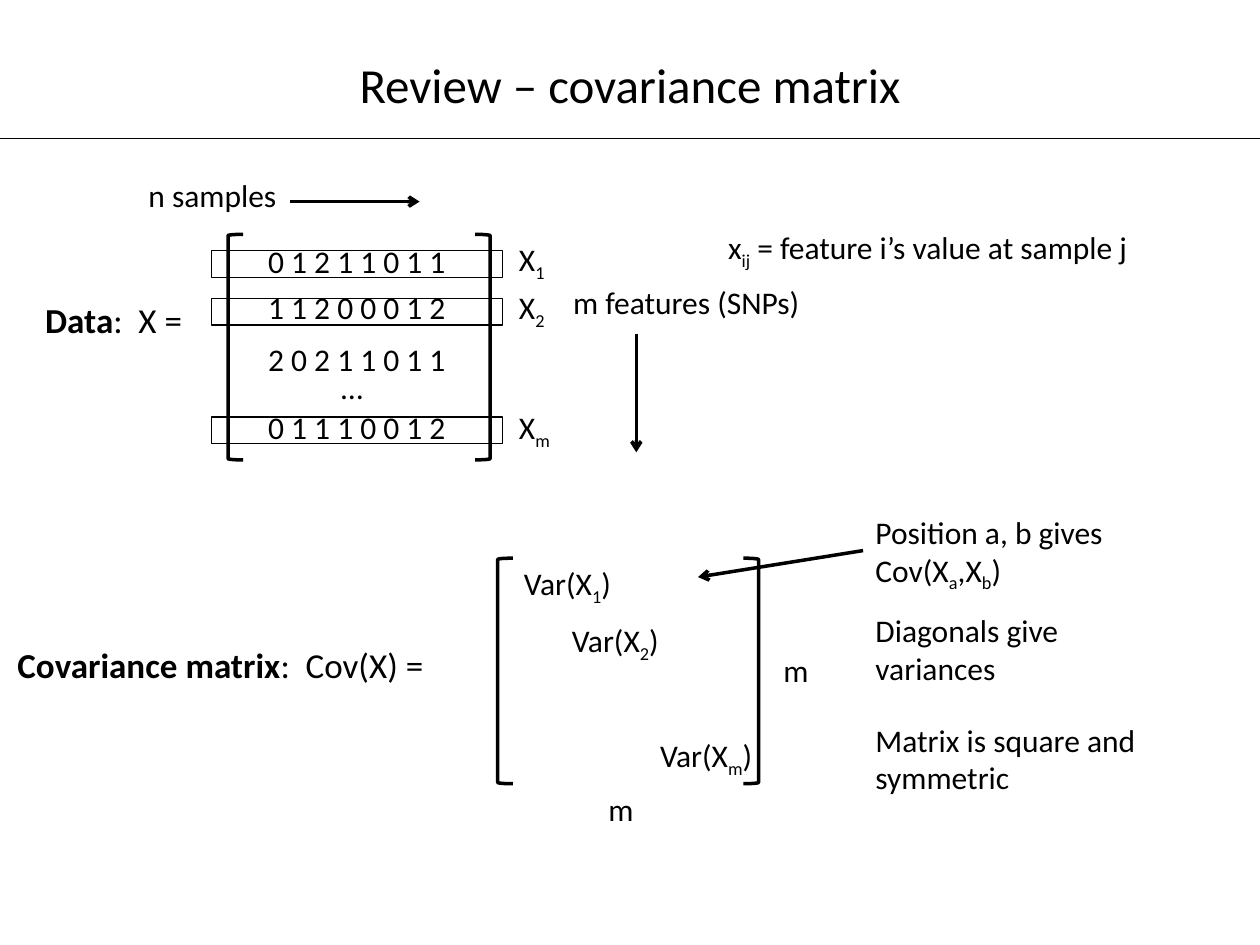
"""Build the covariance matrix review slide."""
from lxml.etree import SubElement
from pptx import Presentation
from pptx.dml.color import RGBColor
from pptx.enum.shapes import MSO_CONNECTOR as Link, MSO_SHAPE as Preset
from pptx.enum.text import MSO_AUTO_SIZE as Fit, PP_ALIGN as Align
from pptx.oxml.ns import qn
from pptx.util import Inches, Pt

COLORS = {"ink": "000000"}
INK = RGBColor.from_string(COLORS["ink"])
FONT = "Calibri"


def add_span(para, text, size, bold=False, subscript=False):
    """Add one run to a paragraph."""
    span = para.add_run()
    span.text = text
    span.font.name = FONT
    span.font.size = Pt(size)
    span.font.bold = bold
    span.font.color.rgb = INK
    if subscript:
        span.font._element.set("baseline", "-25000")


def add_box(page, left, top, width, height, wrap=False):
    """Add a text box and return its first paragraph."""
    box = page.shapes.add_textbox(Inches(left), Inches(top), Inches(width), Inches(height))
    box.text_frame.word_wrap = wrap
    box.text_frame.auto_size = Fit.SHAPE_TO_FIT_TEXT
    return box.text_frame.paragraphs[0]


def add_label(page, left, top, width, *parts):
    """Add a one-line label whose parts alternate between normal and subscript."""
    para = add_box(page, left, top, width, 0.4)
    for index, part in enumerate(parts):
        add_span(para, part, 18, subscript=index % 2 == 1)


def add_note(page, top, *parts):
    """Add a wrapped note in the right column, alternating normal and subscript."""
    para = add_box(page, 6.85, top, 2.54, 0.71, wrap=True)
    for index, part in enumerate(parts):
        add_span(para, part, 18, subscript=index % 2 == 1)


def add_heading(page, left, top, width, name, formula):
    """Add a bold name followed by its formula."""
    para = add_box(page, left, top, width, 0.44)
    add_span(para, name, 20, bold=True)
    add_span(para, formula, 20)


def add_outline(page, preset, left, top, width, height, weight):
    """Add an unfilled preset shape."""
    shape = page.shapes.add_shape(preset, Inches(left), Inches(top), Inches(width), Inches(height))
    shape.shadow.inherit = False
    shape.fill.background()
    shape.line.color.rgb = INK
    shape.line.width = Pt(weight)


def add_brackets(page, left, right, top):
    """Add the pair of brackets around a matrix."""
    for preset, x in ((Preset.LEFT_BRACKET, left), (Preset.RIGHT_BRACKET, right)):
        add_outline(page, preset, x, top, 0.12, 1.79, 2)


def add_line(page, start, end, weight=2, arrow=True):
    """Add a straight line, with an arrowhead at its end if wanted."""
    line = page.shapes.add_connector(Link.STRAIGHT, *map(Inches, start + end))
    line.line.color.rgb = INK
    line.line.width = Pt(weight)
    if arrow:
        SubElement(line.line._get_or_add_ln(), qn("a:tailEnd"), type="arrow")
    SubElement(line._element.spPr, qn("a:effectLst"))


def add_title(page):
    """Add the centred title and the rule under it."""
    para = add_box(page, 0, 0.38, 10, 0.57, wrap=True)
    para.alignment = Align.CENTER
    add_span(para, "Review – covariance matrix", 28)
    add_line(page, (0, 1.1), (10, 1.1), weight=0.75, arrow=False)


def add_data_matrix(page):
    """Add the data matrix with its row and axis labels."""
    add_heading(page, 0.26, 2.32, 1.42, "Data", ":  X =")
    add_brackets(page, 1.81, 3.77, 1.86)
    rows = (
        (1.87, "0 1 2 1 1 0 1 1"),
        (2.24, "1 1 2 0 0 0 1 2"),
        (2.65, "2 0 2 1 1 0 1 1"),
        (3.19, "0 1 1 1 0 0 1 2"),
    )
    for top, values in rows:
        add_label(page, 2.03, top, 1.63, values)
    add_label(page, 2.61, 2.87, 0.38, "…")
    for top, width, index, frame_top in (
        (1.86, 0.42, "1", 1.99),
        (2.24, 0.42, "2", 2.37),
        (3.19, 0.47, "m", 3.31),
    ):
        add_label(page, 4.02, top, width, "X", index)
        add_outline(page, Preset.RECTANGLE, 1.68, frame_top, 2.31, 0.21, 0.75)
    add_label(page, 1.08, 1.35, 1.23, "n samples")
    add_line(page, (2.3, 1.6), (3.33, 1.6))
    add_label(page, 4.45, 2.2, 2.05, "m features (SNPs)")
    add_line(page, (5.05, 2.65), (5.05, 3.59))
    add_label(page, 5.68, 1.76, 3.44, "x", "ij", " = feature i’s value at sample j")


def add_covariance_matrix(page):
    """Add the covariance matrix with its diagonal and notes."""
    add_heading(page, 0.04, 5.06, 3.95, "Covariance matrix", ":  Cov(X) =")
    add_brackets(page, 3.95, 5.9, 4.43)
    for left, top, width, index in (
        (4.06, 4.43, 0.92, "1"),
        (4.44, 4.88, 0.92, "2"),
        (5.14, 5.79, 0.96, "m"),
    ):
        add_label(page, left, top, width, "Var(X", index, ")")
    for left, top in ((4.73, 6.22), (6.12, 5.12)):
        add_label(page, left, top, 0.4, "m")
    add_note(page, 4.02, "Position a, b gives Cov(X", "a", ",X", "b", ")")
    add_note(page, 4.8, "Diagonals give variances")
    add_note(page, 5.67, "Matrix is square and symmetric")
    add_line(page, (6.85, 4.37), (5.54, 4.58))


def main():
    """Build and save the deck."""
    deck = Presentation()
    deck.slide_width, deck.slide_height = Inches(10), Inches(7.5)
    page = deck.slides.add_slide(deck.slide_layouts[6])
    add_title(page)
    add_data_matrix(page)
    add_covariance_matrix(page)
    deck.save("out.pptx")


if __name__ == "__main__":
    main()
